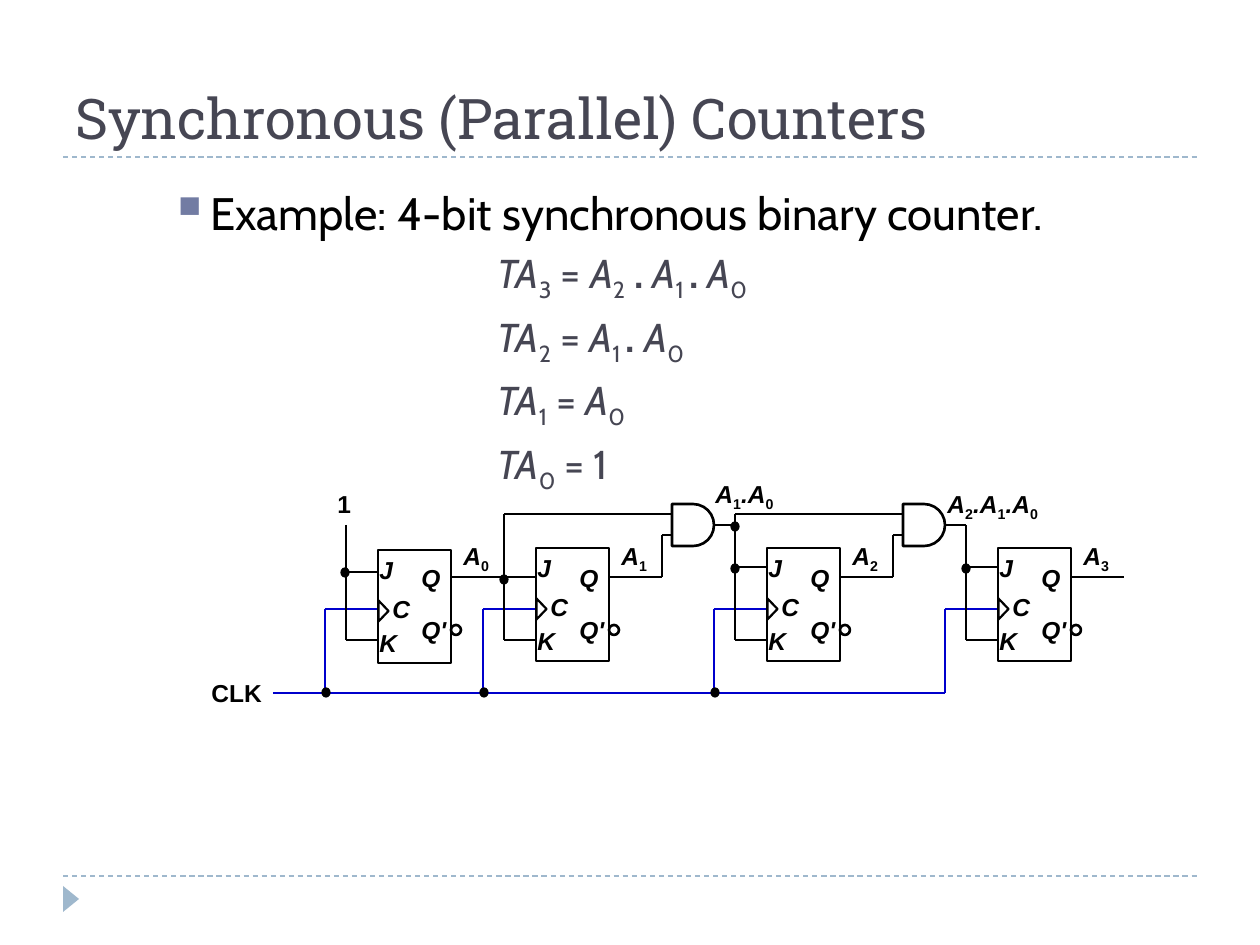
from lxml.etree import SubElement
from pptx import Presentation
from pptx.dml.color import RGBColor
from pptx.enum.dml import MSO_LINE_DASH_STYLE as DASH
from pptx.enum.shapes import MSO_CONNECTOR as CONNECTOR, MSO_SHAPE as SHAPE
from pptx.enum.text import MSO_ANCHOR as ANCHOR
from pptx.oxml.ns import qn
from pptx.util import Pt

PX = 914400 / 126
COLORS = {"text": "464653", "black": "000000", "clock": "0000CC", "rule": "9FB8CD", "bullet": "727CA3"}
RGB = {name: RGBColor.from_string(value) for name, value in COLORS.items()}
ITALIC = ("TA", "A", ".A", "J", "K", "C", "Q", "Q'")

presentation = Presentation()
presentation.slide_width = round(1260 * PX)
presentation.slide_height = round(945 * PX)
slide = presentation.slides.add_slide(presentation.slide_layouts[6])


def add_frame(*box, wrap=True):
    frame = slide.shapes.add_textbox(*[round(value * PX) for value in box]).text_frame
    frame.word_wrap = wrap
    return frame


def write(paragraph, marked, size, font, color, bold=None):
    paragraph.font.size = Pt(size)
    paragraph.font.name = font
    paragraph.font.color.rgb = RGB[color]
    paragraph.font.bold = bold
    for index, token in enumerate(marked.split("|")):
        run = paragraph.add_run()
        run.text = token
        if token in ITALIC:
            run.font.italic = True
        elif index and token.strip().isdigit():
            run._r.get_or_add_rPr().set("baseline", "-25000")
        elif "." in token and token.strip() == ".":
            run.font.bold = True


title = add_frame(63, 21, 1134, 136)
title.vertical_anchor = ANCHOR.BOTTOM
write(title.paragraphs[0], "Synchronous (Parallel) Counters", 32, "Roboto Slab", "text")

body = add_frame(157, 179, 1050, 273)
heading = body.paragraphs[0]
properties = heading._p.get_or_add_pPr()
properties.set("marL", str(round(38 * PX)))
properties.set("indent", str(round(-38 * PX)))
bullet_color = SubElement(properties, qn("a:buClr"))
SubElement(bullet_color, qn("a:srgbClr")).set("val", COLORS["bullet"])
SubElement(properties, qn("a:buSzPct")).set("val", "120000")
SubElement(properties, qn("a:buChar")).set("char", "▪")
write(heading, "Example: 4-bit synchronous binary counter.", 26, "Cabin", "black")

equations = [
    "TA|3| = |A|2| . |A|1 |. |A|0",
    "TA|2| = |A|1 |. |A|0",
    "TA|1| = |A|0",
    "TA|0| = 1",
]
for equation in equations:
    paragraph = body.add_paragraph()
    paragraph._p.get_or_add_pPr().set("marL", str(round(328 * PX)))
    paragraph.space_before = Pt(5)
    write(paragraph, equation, 23, "Cabin", "text")

rules = [(63, y, 1197, y, "rule") for y in (157, 876)]
wires = [(273, 693, 945, 693, "clock")]
outlines = []
dots = [(345, 572), (504, 579), (735, 526), (735, 568), (966, 568)]
labels = [("1", 325, 483, 39), ("CLK", 199, 672, 76), ("A|1|.A|0", 703, 473, 86), ("A|2|.A|1|.A|0", 935, 483, 118)]

stages = [(378, 2, 525, 572, 84), (536, 0, 514, 577, 53), (767, 0, 514, 567, 53), (998, 0, 525, 567, 53)]
for number, (left, drop, feed_top, j_wire, reach) in enumerate(stages):
    tap, feed, right = left - 53, left - 32, left + 73
    outlines += [
        (SHAPE.RECTANGLE, left, 548 + drop, 73, 113, 0, 1.5),
        (SHAPE.ISOSCELES_TRIANGLE, left - 5, 604 + drop, 21, 10, 90, 1.25),
        (SHAPE.OVAL, right, 625, 10, 10, 0, 1.5),
    ]
    wires += [
        (tap, 609, tap, 693, "clock"),
        (tap, 609, left, 609, "clock"),
        (feed, feed_top, feed, 640, "black"),
        (feed, j_wire, left, j_wire, "black"),
        (feed, 640, left, 640, "black"),
        (right, 577, right + reach, 577, "black"),
    ]
    labels += [
        ("J", left - 11, 547 + drop, 39),
        ("K", left - 11, 620 + drop, 43),
        ("C", left + 2, 586 + drop, 43),
        ("Q", left + 31, 557, 44),
        ("Q'", left + 31, 609, 53),
        (f"A|{number}", right, 535, 52),
    ]
    if number < 3:
        dots.append((tap + 1, 692))
    if number > 1:
        gate, previous_feed = left - 95, stages[number - 1][0] - 32
        outlines.append((SHAPE.FLOWCHART_DELAY, gate, 504, 42, 42, 0, 1.5))
        wires += [
            (previous_feed, 514, gate, 514, "black"),
            (gate - 10, 535, gate - 10, 577, "black"),
            (gate - 10, 535, gate, 535, "black"),
            (gate + 42, 525, feed, 525, "black"),
        ]

for *ends, color in rules + wires:
    connector = slide.shapes.add_connector(CONNECTOR.STRAIGHT, *[round(value * PX) for value in ends])
    connector.line.color.rgb = RGB[color]
    connector.line.width = Pt(0.75 if color == "rule" else 1.25)
    if color == "rule":
        connector.line.dash_style = DASH.DASH
    SubElement(connector._element.spPr, qn("a:effectLst"))

solids = [(SHAPE.OVAL, x - 4, y - 4, 8, 9, 0, 0.75, "black") for x, y in dots]
solids.append((SHAPE.ISOSCELES_TRIANGLE, 58, 891, 26, 16, 90, 0, "rule"))
for kind, *box, rotation, line_width, fill in [(*outline, None) for outline in outlines] + solids:
    shape = slide.shapes.add_shape(kind, *[round(value * PX) for value in box])
    shape.shadow.inherit = False
    shape.rotation = rotation
    if fill:
        shape.fill.solid()
        shape.fill.fore_color.rgb = RGB[fill]
    else:
        shape.fill.background()
    if line_width:
        shape.line.color.rgb = RGB["black"]
        shape.line.width = Pt(line_width)
    else:
        shape.line.fill.background()

for marked, left, top, width in labels:
    frame = add_frame(left, top, width, 42, wrap=False)
    write(frame.paragraphs[0], marked, 14, "Arial", "black", True)

presentation.save("out.pptx")
